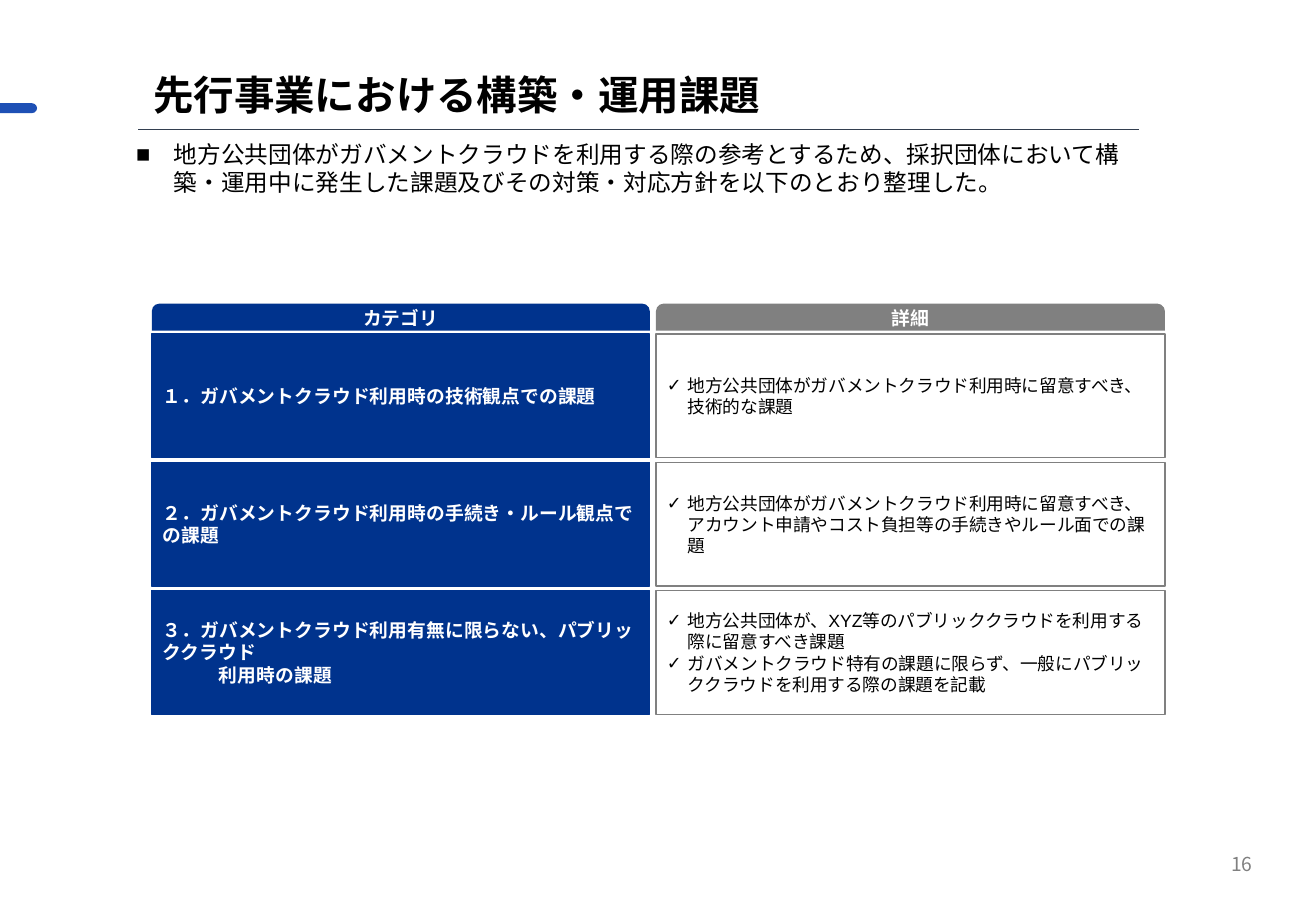
import pptx
import pptx.util
import pptx.dml.color
import pptx.enum.shapes
import pptx.enum.text
import lxml.etree

Pt = pptx.util.Pt
Form = pptx.enum.shapes.MSO_SHAPE
Align = pptx.enum.text.PP_ALIGN
Anchor = pptx.enum.text.MSO_ANCHOR

NOTO, ARIAL = "Noto Sans CJK JP", "Arial"
NAVY, GRAY, WHITE, BLACK = "00338D", "808080", "FFFFFF", "000000"
TITLE = "先行事業における構築・運用課題"
LEAD = "地方公共団体がガバメントクラウドを利用する際の参考とするため、採択団体において構築・運用中に発生した課題及びその対策・対応方針を以下のとおり整理した。"
PAGE = "16"
HEADS = ("カテゴリ", "詳細")
ROWS = [
    (["１．ガバメントクラウド利用時の技術観点での課題"],
     ["地方公共団体がガバメントクラウド利用時に留意すべき、技術的な課題"]),
    (["２．ガバメントクラウド利用時の手続き・ルール観点での課題"],
     ["地方公共団体がガバメントクラウド利用時に留意すべき、アカウント申請やコスト負担等の手続きやルール面での課題"]),
    (["３．ガバメントクラウド利用有無に限らない、パブリッククラウド", "利用時の課題"],
     ["地方公共団体が、XYZ等のパブリッククラウドを利用する際に留意すべき課題",
      "ガバメントクラウド特有の課題に限らず、一般にパブリッククラウドを利用する際の課題を記載"]),
]
COLS = [(90, 295.2, NAVY), (388.8, 301.7, GRAY)]
HEAD_TOP, HEAD_TALL = 180, 16
ROW_TOP, ROW_TALL, STEP = 198, 73.4, 76

deck = pptx.Presentation()
deck.slide_width, deck.slide_height = Pt(780), Pt(540)
page = deck.slides.add_slide(deck.slide_layouts[6])


def color(code):
    return pptx.dml.color.RGBColor.from_string(code)


def tag(node, name, **attrs):
    return lxml.etree.SubElement(node, pptx.oxml.ns.qn(name), attrs)


def write(shape, lines, size, font, ink, bold=False, align=Align.LEFT,
          pad=(6.5, 3.6), anchor=Anchor.MIDDLE, wrap=True):
    frame = shape.text_frame
    frame.text = "\n".join(lines)
    frame.word_wrap, frame.vertical_anchor = wrap, anchor
    frame.margin_left = frame.margin_right = Pt(pad[0])
    frame.margin_top = frame.margin_bottom = Pt(pad[1])
    for para in frame.paragraphs:
        para.alignment = align
        for run in para.runs:
            run.font.size, run.font.bold, run.font.name = Pt(size), bold, font
            run.font.color.rgb = color(ink)
            tag(run.font._element, "a:ea", typeface=NOTO)
    return frame.paragraphs


def indent(para, left, first=0, mark=None):
    props = para._p.get_or_add_pPr()
    props.set("marL", str(Pt(left)))
    props.set("indent", str(Pt(first)))
    if mark:
        tag(props, "a:buFont", typeface=ARIAL)
        tag(props, "a:buChar", char=mark)


def block(form, box, fill, edge=None):
    shape = page.shapes.add_shape(form, *map(Pt, box))
    shape.shadow.inherit = False
    shape.fill.solid()
    shape.fill.fore_color.rgb = color(fill)
    if edge:
        shape.line.color.rgb = color(edge)
        shape.line.width = Pt(0.75)
    else:
        shape.line.fill.background()
    return shape


def label(box, *args, **opts):
    return write(page.shapes.add_textbox(*map(Pt, box)), *args, **opts)


pill = block(Form.ROUNDED_RECTANGLE, (-5.5, 61.2, 27.5, 5.8), "1E50B5")
pill.adjustments[0] = 0.5

lead = label((76.3, 78.5, 613.4, 42.5), [LEAD], 14, NOTO, BLACK,
             pad=(4.3, 4.3), anchor=Anchor.TOP)[0]
lead.space_after = Pt(6)
indent(lead, 22.5, -22.5, "■")

label((90.7, 39.6, 613.4, 32.4), [TITLE], 24, NOTO, BLACK, bold=True, pad=(0, 0))

rule = page.shapes.add_connector(
    pptx.enum.shapes.MSO_CONNECTOR.STRAIGHT, Pt(82), Pt(76.5), Pt(675.4), Pt(76.5))
rule.line.color.rgb = color("333F50")
rule.line.width = Pt(0.5)
tag(rule._element.spPr, "a:effectLst")

label((573.8, 497.5, 175.7, 28.8), [PAGE], 11.4, NOTO, GRAY,
      align=Align.RIGHT, pad=(7.2, 3.6))

for col, (left, wide, tone) in enumerate(COLS):
    head = block(Form.ROUND_2_SAME_RECTANGLE, (left, HEAD_TOP, wide, HEAD_TALL), tone)
    head.adjustments[0] = 0.284
    write(head, [HEADS[col]], 11.1, ARIAL, WHITE, True, Align.CENTER, wrap=False)
    for num, row in enumerate(ROWS):
        box = (left, ROW_TOP + num * STEP, wide, ROW_TALL)
        if col == 0:
            cell = block(Form.RECTANGLE, box, NAVY, NAVY)
            paras = write(cell, row[col], 11.1, ARIAL, WHITE, True)
            for para in paras[1:]:
                indent(para, 33.3)
        else:
            cell = block(Form.RECTANGLE, box, WHITE, GRAY)
            for para in write(cell, row[col], 10.5, ARIAL, BLACK):
                indent(para, 12.4, -12.4, "✓")

deck.save("out.pptx")
